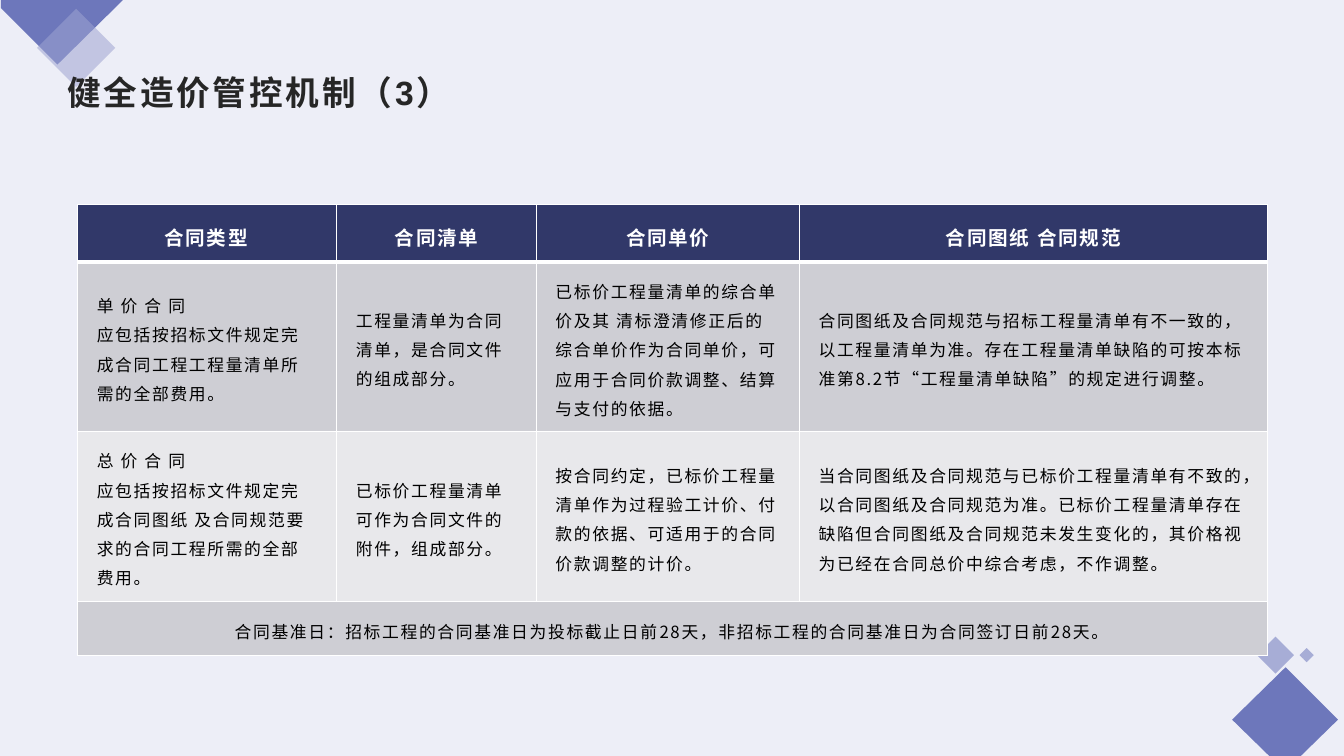
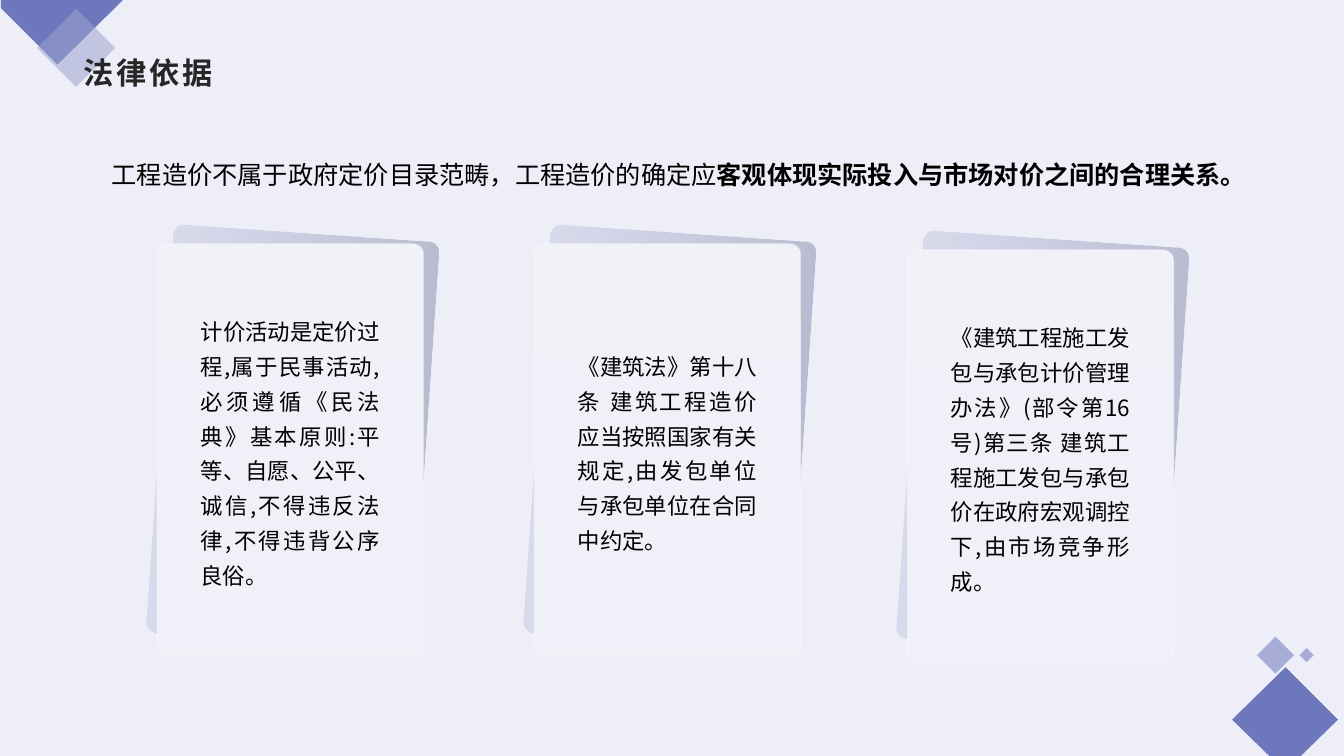
"""Build two slides on construction cost control: a contract table and three legal cards."""
import lxml.etree
import pptx
import pptx.dml.color
import pptx.enum.shapes
import pptx.enum.text
import pptx.oxml.ns
import pptx.util

PX = 9144
RGB = pptx.dml.color.RGBColor
PALE = RGB(0xED, 0xEE, 0xF7)
BLUE = RGB(0x6D, 0x77, 0xBB)
MIST = RGB(0x9E, 0xA4, 0xD2)
LILAC = RGB(0x92, 0x99, 0xCC)
NAVY = RGB(0x31, 0x38, 0x69)
INK = RGB(0x26, 0x26, 0x26)
BLACK = RGB(0, 0, 0)
WHITE = RGB(255, 255, 255)
GREY = RGB(0xCE, 0xCE, 0xD4)
LIGHT = RGB(0xE8, 0xE8, 0xEB)
SANS = "Noto Sans CJK SC"
SHAPE = pptx.enum.shapes.MSO_SHAPE
ALIGN = pptx.enum.text.PP_ALIGN
MIDDLE = pptx.enum.text.MSO_ANCHOR.MIDDLE
qn = pptx.oxml.ns.qn
add = lxml.etree.SubElement


def style(para, size, color, bold=False, gap=0, face=SANS):
    """Set the font of a paragraph, with letter gap in points."""
    font = para.font
    font.size = pptx.util.Pt(size)
    font.color.rgb = color
    font.bold = bold
    font.name = face
    font._element.set("spc", str(round(gap * 100)))
    add(font._element, qn("a:ea"), typeface=SANS)


def fade(shape, *shares):
    """Give the colours of a shape, in order, their opacity in percent."""
    for color, share in zip(shape._element.spPr.iter(qn("a:srgbClr")), shares):
        add(color, qn("a:alpha"), val=str(share * 1000))


deck = pptx.Presentation()
deck.slide_width, deck.slide_height = 1333 * PX, 750 * PX
ground = deck.slide_master.background.fill
ground.solid()
ground.fore_color.rgb = PALE

heads = [
    ("健全造价管控机制（3）", 24, (57, 66, 1200, 77)),
    ("法律依据", 21.6, (73, 49, 1187, 48)),
]
large = [
    [(1275, 662), (1327, 714), (1285, 755), (1264, 755), (1222, 714)],
    [(1, -1), (123, -1), (57, 64), (1, 8)],
]
small = [(1252, 637, 26, BLUE), (1291, 645, 10, BLUE), (48, 20, 55, MIST)]
slides = []
for text, size, box in heads:
    slide = deck.slides.add_slide(deck.slide_layouts[6])
    slides.append(slide)
    for points in large:
        pen = slide.shapes.build_freeform(*points[0], scale=PX)
        pen.add_line_segments(points[1:])
        gem = pen.convert_to_shape()
        gem.fill.solid()
        gem.fill.fore_color.rgb = BLUE
        gem.line.fill.background()
        gem.shadow.inherit = False
    for x, y, side, color in small:
        gem = slide.shapes.add_shape(SHAPE.RECTANGLE, x * PX, y * PX, side * PX, side * PX)
        gem.rotation = 45
        gem.fill.solid()
        gem.fill.fore_color.rgb = color
        gem.line.fill.background()
        gem.shadow.inherit = False
        fade(gem, 54)
    frame = slide.shapes.add_textbox(*(n * PX for n in box)).text_frame
    frame.word_wrap = True
    frame.paragraphs[0].text = text
    style(frame.paragraphs[0], size, INK, True, 2, "Arial")

rows = [
    ["合同类型", "合同清单", "合同单价", "合同图纸 合同规范"],
    [
        "单 价 合 同\n应包括按招标文件规定完成合同工程工程量清单所需的全部费用。",
        "工程量清单为合同清单，是合同文件的组成部分。",
        "已标价工程量清单的综合单价及其 清标澄清修正后的综合单价作为合同单价，可应用于合同价款调整、结算与支付的依据。",
        "合同图纸及合同规范与招标工程量清单有不一致的，以工程量清单为准。存在工程量清单缺陷的可按本标准第8.2节“工程量清单缺陷”的规定进行调整。",
    ],
    [
        "总 价 合 同\n应包括按招标文件规定完成合同图纸 及合同规范要求的合同工程所需的全部费用。",
        "已标价工程量清单可作为合同文件的附件，组成部分。",
        "按合同约定，已标价工程量清单作为过程验工计价、付款的依据、可适用于的合同价款调整的计价。",
        "当合同图纸及合同规范与已标价工程量清单有不致的，以合同图纸及合同规范为准。已标价工程量清单存在缺陷但合同图纸及合同规范未发生变化的，其价格视为已经在合同总价中综合考虑，不作调整。",
    ],
    ["合同基准日：招标工程的合同基准日为投标截止日前28天，非招标工程的合同基准日为合同签订日前28天。", "", "", ""],
]
table = slides[0].shapes.add_table(4, 4, 77 * PX, 203 * PX, 1180 * PX, 447 * PX).table
table.horz_banding = False
for column, width in zip(table.columns, (257, 198, 261, 464)):
    column.width = width * PX
for row, height in zip(table.rows, (57, 168, 169, 53)):
    row.height = height * PX
table.cell(3, 0).merge(table.cell(3, 3))
for r, texts in enumerate(rows):
    for c, text in enumerate(texts):
        cell = table.cell(r, c)
        cell.margin_left = cell.margin_right = 19 * PX
        cell.margin_top = cell.margin_bottom = 12 * PX
        if c == 0:
            cell.margin_right = 21 * PX
        cell.vertical_anchor = MIDDLE
        for side in "LRTB":
            thick = (r, side) in ((0, "B"), (1, "T"))
            width = pptx.util.Pt(3 if thick else 1)
            edge = add(cell._tc.get_or_add_tcPr(), qn("a:ln" + side), w=str(width))
            add(add(edge, qn("a:solidFill")), qn("a:srgbClr"), val=str(WHITE))
        cell.fill.solid()
        cell.fill.fore_color.rgb = (NAVY, GREY, LIGHT, GREY)[r]
        para = cell.text_frame.paragraphs[0]
        para.text = text
        para.line_spacing = 1.2
        para.alignment = ALIGN.CENTER if r in (0, 3) else ALIGN.LEFT
        if r == 0:
            style(para, 14, WHITE, True, 1.2)
        else:
            style(para, 12, BLACK, False, 1.2)

shapes = slides[1].shapes
frame = shapes.add_textbox(101 * PX, 153 * PX, 1188 * PX, 71 * PX).text_frame
frame.word_wrap = True
para = frame.paragraphs[0]
style(para, 18, BLACK)
para.add_run().text = "工程造价不属于政府定价目录范畴，工程造价的确定应"
claim = para.add_run()
claim.text = "客观体现实际投入与市场对价之间的合理关系。"
claim.font.bold = True

cards = [
    (156, 242, "计价活动是定价过程,属于民事活动,必须遵循《民法典》基本原则:平等、自愿、公平、诚信,不得违反法律,不得违背公序良俗。"),
    (530, 242, "《建筑法》第十八条 建筑工程造价应当按照国家有关规定,由发包单位与承包单位在合同中约定。"),
    (900, 248, "《建筑工程施工发包与承包计价管理办法》(部令第16号)第三条 建筑工程施工发包与承包价在政府宏观调控下,由市场竞争形成。"),
]
for x, y, text in cards:
    boxes = [(x + 2, y - 11, 264, 405), (x, y, 264, 408), (x, y, 264, 408)]
    back, base, front = [
        shapes.add_shape(SHAPE.ROUNDED_RECTANGLE, *(n * PX for n in box)) for box in boxes
    ]
    for card in (back, base, front):
        card.adjustments[0] = 0.04
        card.line.fill.background()
        card.shadow.inherit = False
    back.rotation = 4
    for card, angle, colors in ((back, 0, (LILAC, NAVY)), (front, 270, (WHITE, WHITE))):
        card.fill.gradient()
        card.fill.gradient_angle = angle
        for stop, color, place in zip(card.fill.gradient_stops, colors, (0, 1)):
            stop.color.rgb = color
            stop.position = place
    fade(back, 20, 30)
    base.fill.solid()
    base.fill.fore_color.rgb = PALE
    front.line.color.rgb = WHITE
    front.line.width = pptx.util.Pt(1)
    fade(front, 25, 20, 20)
    frame = front.text_frame
    frame.word_wrap = True
    frame.vertical_anchor = MIDDLE
    frame.margin_left = frame.margin_right = 40 * PX
    frame.margin_top = frame.margin_bottom = 5 * PX
    para = frame.paragraphs[0]
    para.text = text
    para.alignment = ALIGN.JUSTIFY
    para.line_spacing = 1.3
    style(para, 16, BLACK)

deck.save("out.pptx")
